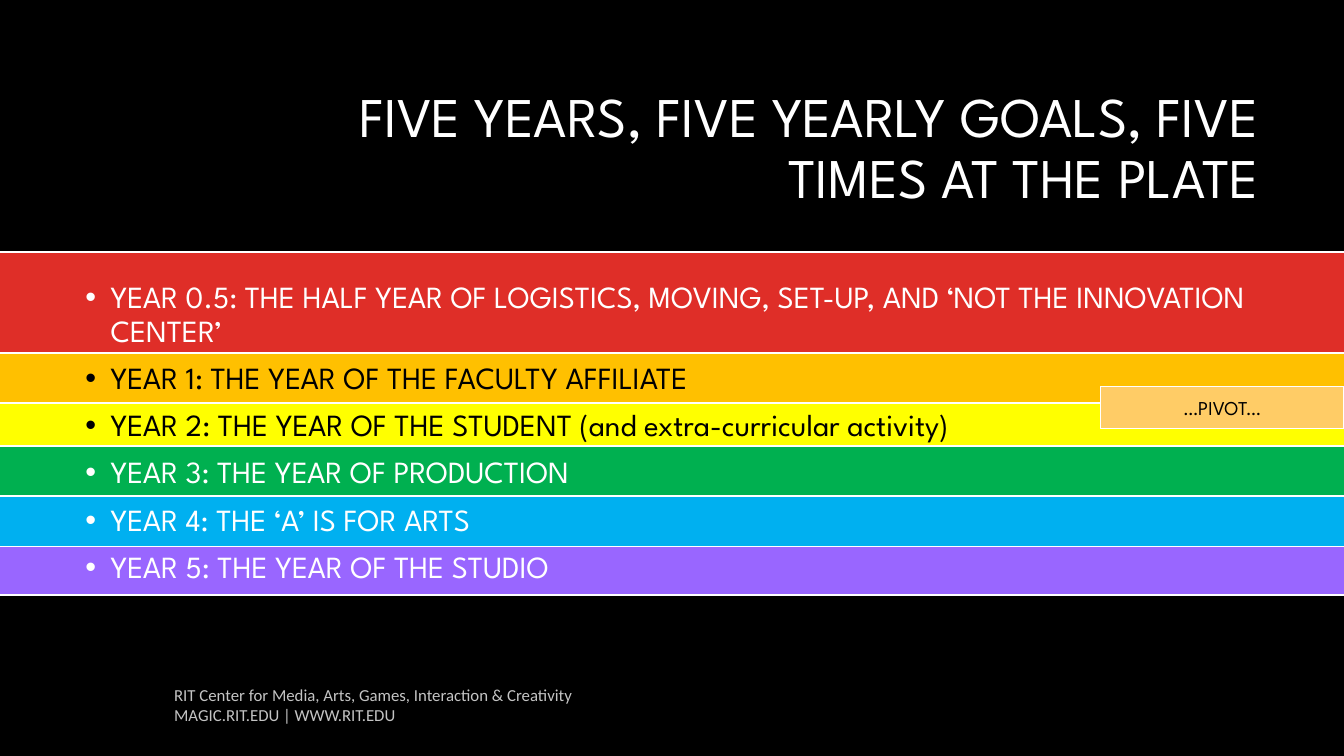
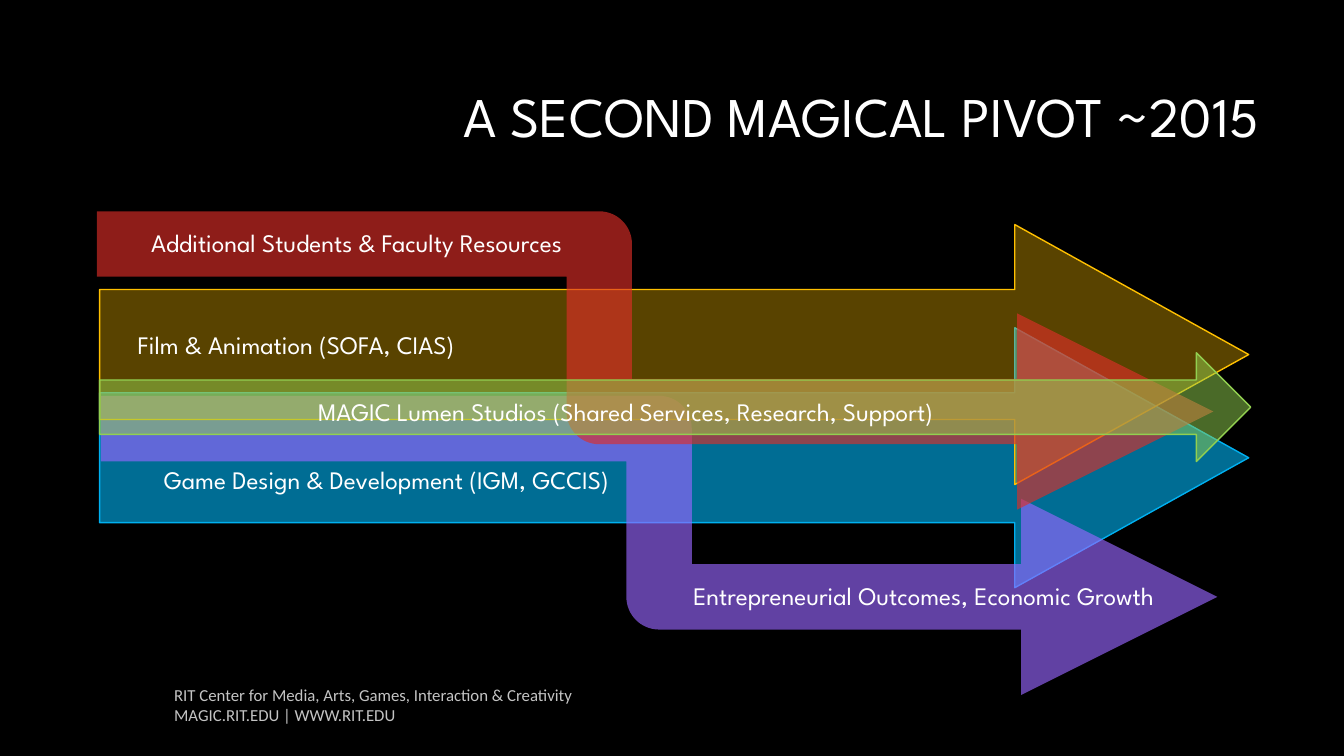
from lxml import etree
from pptx import Presentation
from pptx.dml.color import RGBColor
from pptx.enum.shapes import MSO_CONNECTOR, MSO_SHAPE
from pptx.enum.text import MSO_ANCHOR, MSO_AUTO_SIZE, PP_ALIGN
from pptx.oxml.ns import qn
from pptx.util import Cm, Pt

LEFT, CENTER, RIGHT = PP_ALIGN.LEFT, PP_ALIGN.CENTER, PP_ALIGN.RIGHT
TOP, MIDDLE = MSO_ANCHOR.TOP, MSO_ANCHOR.MIDDLE
RECTANGLE, RIGHT_ARROW = MSO_SHAPE.RECTANGLE, MSO_SHAPE.RIGHT_ARROW
STRAIGHT, ELBOW = MSO_CONNECTOR.STRAIGHT, MSO_CONNECTOR.ELBOW

BLACK = RGBColor(0x00, 0x00, 0x00)
WHITE = RGBColor(0xFF, 0xFF, 0xFF)
GRAY = RGBColor(0xC4, 0xC4, 0xC4)
RED = RGBColor(0xDF, 0x2E, 0x28)
AMBER = RGBColor(0xFF, 0xC0, 0x00)
YELLOW = RGBColor(0xFF, 0xFF, 0x00)
GREEN = RGBColor(0x00, 0xB0, 0x50)
BLUE = RGBColor(0x00, 0xB0, 0xF0)
PURPLE = RGBColor(0x99, 0x66, 0xFF)
LIME = RGBColor(0x92, 0xD0, 0x50)
PEACH = RGBColor(0xFF, 0xCC, 0x66)

SPARTAN = "League Spartan"
PAGE_WIDTH = 33.87
TITLE_RIGHT = 31.98
FOOTER = [
    "RIT Center for Media, Arts, Games, Interaction & Creativity",
    "MAGIC.RIT.EDU | WWW.RIT.EDU",
]


def write_text(shape, lines, size, color, align=LEFT, anchor=TOP, font=SPARTAN, spacing=None):
    """Fill a shape with one paragraph per line, all in the same format."""
    frame = shape.text_frame
    frame.text = "\n".join(lines)
    frame_format = {"word_wrap": True, "auto_size": MSO_AUTO_SIZE.NONE, "vertical_anchor": anchor}
    for name, value in frame_format.items():
        setattr(frame, name, value)
    for paragraph in frame.paragraphs:
        paragraph.alignment = align
        paragraph.line_spacing = spacing
        run_font = paragraph.runs[0].font
        run_font.color.rgb = color
        for name, value in {"name": font, "size": Pt(size)}.items():
            setattr(run_font, name, value)


def add_titled_slide(title, title_left):
    slide = prs.slides.add_slide(prs.slide_layouts[5])
    heading = slide.shapes.title
    place = {"left": title_left, "top": 2.13, "width": TITLE_RIGHT - title_left, "height": 3.58}
    for name, value in place.items():
        setattr(heading, name, Cm(value))
    write_text(heading, [title], 40, WHITE, RIGHT, spacing=0.9)

    footer = slide.shapes.add_textbox(Cm(4.39), Cm(17.25), Cm(18.42), Cm(1.27))
    write_text(footer, FOOTER, 12, GRAY, font="Calibri")
    for side in ("left", "top", "right", "bottom"):
        setattr(footer.text_frame, f"margin_{side}", 0)
    return slide


prs = Presentation()
prs.slide_width, prs.slide_height = Cm(PAGE_WIDTH), Cm(19.05)
background = prs.slide_master.background.fill
background.solid()
background.fore_color.rgb = BLACK

# Yearly goals: one coloured band per year
goals_slide = add_titled_slide("FIVE YEARS, FIVE YEARLY GOALS, FIVE TIMES AT THE PLATE", 8.05)
goals = [
    ("YEAR 0.5: THE HALF YEAR OF LOGISTICS, MOVING, SET-UP, AND ‘NOT THE INNOVATION CENTER’", RED, WHITE),
    ("YEAR 1: THE YEAR OF THE FACULTY AFFILIATE", AMBER, BLACK),
    ("YEAR 2: THE YEAR OF THE STUDENT (and extra-curricular activity)", YELLOW, BLACK),
    ("YEAR 3: THE YEAR OF PRODUCTION", GREEN, WHITE),
    ("YEAR 4: THE ‘A’ IS FOR ARTS", BLUE, WHITE),
    ("YEAR 5: THE YEAR OF THE STUDIO", PURPLE, WHITE),
]
band_edges = [6.35, 8.89, 10.16, 11.23, 12.5, 13.77, 14.99]

for (goal, band_color, text_color), top, bottom in zip(goals, band_edges, band_edges[1:]):
    band = goals_slide.shapes.add_shape(RECTANGLE, 0, Cm(top), Cm(PAGE_WIDTH), Cm(bottom - top))
    band.fill.solid()
    band.fill.fore_color.rgb = band_color
    band.line.fill.background()

goal_list = goals_slide.shapes.add_textbox(Cm(1.9), Cm(6.99), Cm(30.05), Cm(8.08))
write_text(goal_list, [goal for goal, band_color, text_color in goals], 22, WHITE, spacing=0.9)
for index, paragraph in enumerate(goal_list.text_frame.paragraphs):
    if index:
        paragraph.space_before = Pt(10)
    properties = paragraph._p.get_or_add_pPr()
    properties.set("marL", str(Cm(0.64)))
    properties.set("indent", str(Cm(-0.64)))
    etree.SubElement(properties, qn("a:buFont"), typeface="Arial")
    etree.SubElement(properties, qn("a:buChar"), char="•")
    paragraph.runs[0].font.color.rgb = goals[index][2]

for edge in band_edges:
    divider = goals_slide.shapes.add_connector(STRAIGHT, 0, Cm(edge), Cm(PAGE_WIDTH), Cm(edge))
    divider.line.color.rgb = WHITE
    divider.line.width = Pt(1.25)

pivot = goals_slide.shapes.add_shape(RECTANGLE, Cm(27.73), Cm(9.74), Cm(6.14), Cm(1.06))
pivot.fill.solid()
pivot.fill.fore_color.rgb = PEACH
pivot.line.color.rgb = WHITE
pivot.line.width = Pt(1)
write_text(pivot, ["…PIVOT…"], 14, BLACK, CENTER, MIDDLE)

# Second pivot: overlapping translucent streams, from back to front
pivot_slide = add_titled_slide("A SECOND MAGICAL PIVOT ~2015", 2.44)
streams = [
    # kind, left, top, width, height, colour, opacity %, head length or bend position
    (RIGHT_ARROW, 2.51, 8.26, 28.96, 6.55, BLUE, 62, 0.9),
    (ELBOW, 2.54, 10.8, 28.14, 4.24, PURPLE, 64, 0.5),
    (RIGHT_ARROW, 2.51, 5.66, 28.96, 6.55, AMBER, 35, 0.9),
    (ELBOW, 2.44, 6.15, 28.14, 4.22, RED, 64, 0.45),
    (RIGHT_ARROW, 2.51, 8.89, 29.01, 2.74, LIME, 51, 0.5),
]
for kind, left, top, width, height, color, opacity, adjustment in streams:
    if kind == ELBOW:
        stream = pivot_slide.shapes.add_connector(
            ELBOW, Cm(left), Cm(top), Cm(left + width), Cm(top + height))
        stream.line.width = Pt(46.75)
        stream.line.color.rgb = color
        outline = stream.line._get_or_add_ln()
        etree.SubElement(outline, qn("a:round"))
        etree.SubElement(outline, qn("a:tailEnd"), type="triangle")
        guides = stream._element.spPr.find(".//" + qn("a:avLst"))
        etree.SubElement(guides, qn("a:gd"), name="adj1", fmla=f"val {round(adjustment * 100000)}")
    else:
        stream = pivot_slide.shapes.add_shape(
            RIGHT_ARROW, Cm(left), Cm(top), Cm(width), Cm(height))
        stream.adjustments[1] = adjustment
        stream.fill.solid()
        stream.fill.fore_color.rgb = color
        stream.line.color.rgb = color
        stream.line.width = Pt(1)
    main_color = stream._element.spPr.find(".//" + qn("a:srgbClr"))
    etree.SubElement(main_color, qn("a:alpha"), val=str(opacity * 1000))

label_height = 1.27
stream_labels = [
    # text, centre x, centre y, width
    ("Film & Animation (SOFA, CIAS)", 7.46, 8.69, 14),
    ("Game Design & Development (IGM, GCCIS)", 9.74, 12.07, 14),
    ("Entrepreneurial Outcomes, Economic Growth", 23.28, 15.01, 14),
    ("Additional Students & Faculty Resources", 8.99, 6.1, 14),
    ("MAGIC Lumen Studios (Shared Services, Research, Support)", 15.77, 10.36, 20),
]
for text, center_x, center_y, width in stream_labels:
    label = pivot_slide.shapes.add_textbox(
        Cm(center_x - width / 2), Cm(center_y - label_height / 2), Cm(width), Cm(label_height))
    write_text(label, [text], 18, WHITE, CENTER, MIDDLE)

# No shadows anywhere
for slide in prs.slides:
    for shape in slide.shapes:
        if hasattr(shape, "shadow"):
            shape.shadow.inherit = False
        else:
            etree.SubElement(shape._element.spPr, qn("a:effectLst"))

prs.save("out.pptx")
